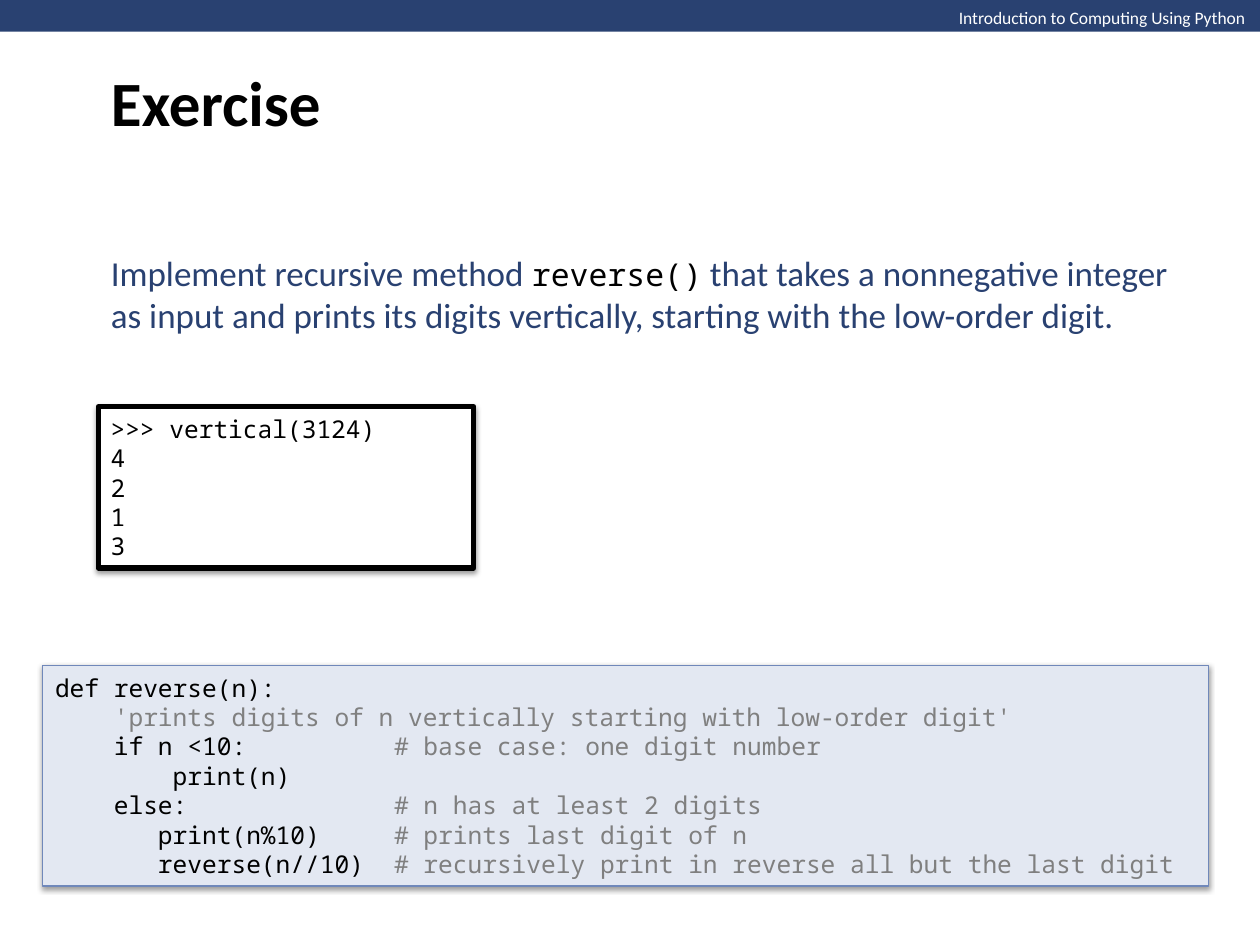
import dataclasses
import typing

import lxml.etree
import pptx
import pptx.dml.color
import pptx.enum.shapes
import pptx.enum.text
import pptx.oxml.ns
import pptx.shapes.autoshape
import pptx.slide
import pptx.text.text
import pptx.util

Cm = pptx.util.Cm
Pt = pptx.util.Pt

COLORS = {
    "navy": "294171",
    "white": "FFFFFF",
    "black": "000000",
    "pale": "E3E8F2",
    "edge": "7088BA",
    "docstring": "808080",
    "comment": "7F7F7F",
}
FORMATS = {
    "header": {"name": "Calibri", "size": Pt(10), "bold": False},
    "title": {"name": "Calibri", "size": Pt(36), "bold": True},
    "task": {"name": "Calibri", "size": Pt(20), "bold": False},
    "method": {"name": "Noto Sans Mono", "size": Pt(18), "bold": False},
    "code": {"name": "Noto Sans Mono", "size": Pt(14), "bold": False},
}
COMMENT_COLUMN = 23


class Span(typing.NamedTuple):
    text: str
    style: str
    color: str


Line = list[Span]


@dataclasses.dataclass
class Box:
    left: float
    top: float
    width: float
    height: float

    def lengths(self) -> list[pptx.util.Length]:
        return [Cm(side) for side in dataclasses.astuple(self)]


@dataclasses.dataclass
class CodePanel:
    box: Box
    fill: str
    edge: str
    edge_width: float
    lines: list[Line]


def rgb(color: str) -> pptx.dml.color.RGBColor:
    return pptx.dml.color.RGBColor.from_string(COLORS[color])


def code_line(code: str, comment: str = "") -> Line:
    if not comment:
        return [Span(code, "code", "black")]
    return [
        Span(code.ljust(COMMENT_COLUMN), "code", "black"),
        Span(comment, "code", "comment"),
    ]


def write(frame: pptx.text.text.TextFrame, lines: list[Line], wrap: bool = True) -> None:
    layout = {
        "word_wrap": wrap,
        "auto_size": pptx.enum.text.MSO_AUTO_SIZE.NONE,
        "vertical_anchor": pptx.enum.text.MSO_ANCHOR.MIDDLE,
    }
    for attribute, value in layout.items():
        setattr(frame, attribute, value)
    for index, line in enumerate(lines):
        paragraph = frame.paragraphs[0] if index == 0 else frame.add_paragraph()
        paragraph.alignment = pptx.enum.text.PP_ALIGN.LEFT
        paragraph.space_before = Pt(0)
        for span in line:
            run = paragraph.add_run()
            run.text = span.text
            for attribute, value in FORMATS[span.style].items():
                setattr(run.font, attribute, value)
            run.font.color.rgb = rgb(span.color)


def fill_placeholder(placeholder: typing.Any, box: Box, line: Line) -> None:
    for side, length in zip(("left", "top", "width", "height"), box.lengths()):
        setattr(placeholder, side, length)
    write(placeholder.text_frame, [line])


def remove_bullet(paragraph: typing.Any) -> None:
    properties = paragraph._p.get_or_add_pPr()
    properties.set("marL", "0")
    properties.set("indent", "0")
    lxml.etree.SubElement(properties, pptx.oxml.ns.qn("a:buNone"))


def add_rectangle(slide: pptx.slide.Slide, box: Box, fill: str) -> pptx.shapes.autoshape.Shape:
    rectangle = slide.shapes.add_shape(
        pptx.enum.shapes.MSO_SHAPE.RECTANGLE, *box.lengths()
    )
    rectangle.shadow.inherit = False
    rectangle.fill.solid()
    rectangle.fill.fore_color.rgb = rgb(fill)
    rectangle.line.fill.background()
    return rectangle


def cast_shadow(rectangle: pptx.shapes.autoshape.Shape) -> None:
    qn = pptx.oxml.ns.qn
    effects = rectangle._element.spPr.find(qn("a:effectLst"))
    shadow = lxml.etree.SubElement(
        effects, qn("a:outerShdw"),
        blurRad=str(Pt(3.1)), dist=str(Pt(1.6)), dir="5400000", rotWithShape="0",
    )
    tint = lxml.etree.SubElement(shadow, qn("a:srgbClr"), val=COLORS["black"])
    lxml.etree.SubElement(tint, qn("a:alpha"), val="38000")


def add_code_panel(slide: pptx.slide.Slide, panel: CodePanel) -> None:
    rectangle = add_rectangle(slide, panel.box, panel.fill)
    rectangle.line.color.rgb = rgb(panel.edge)
    rectangle.line.width = Pt(panel.edge_width)
    cast_shadow(rectangle)
    write(rectangle.text_frame, panel.lines)


SOLUTION = CodePanel(
    Box(0.86, 13.41, 23.5, 4.45), "pale", "edge", 0.75,
    [
        code_line("def reverse(n):"),
        [Span("    'prints digits of n vertically starting with low-order digit'",
              "code", "docstring")],
        code_line("    if n <10:", "# base case: one digit number"),
        code_line("        print(n)"),
        code_line("    else:", "# n has at least 2 digits"),
        code_line("       print(n%10)", "# prints last digit of n"),
        code_line("       reverse(n//10)",
                  "# recursively print in reverse all but the last digit"),
    ],
)
SESSION = CodePanel(
    Box(1.98, 8.2, 7.57, 3.25), "white", "black", 3,
    [code_line(text) for text in (">>> vertical(3124)", *"4213")],
)
TASK = [
    Span("Implement recursive method ", "task", "navy"),
    Span("reverse()", "method", "black"),
    Span(" that takes a nonnegative integer as input and prints its digits "
         "vertically, starting with the low-order digit.", "task", "navy"),
]


def main() -> None:
    deck = pptx.Presentation()
    deck.slide_width, deck.slide_height = Cm(25.4), Cm(19.05)
    slide = deck.slides.add_slide(deck.slide_layouts[1])

    add_rectangle(slide, Box(0, 0, 25.43, 0.64), "navy")
    course = slide.shapes.add_textbox(*Box(19.08, 0, 6.35, 0.69).lengths())
    write(course.text_frame,
          [[Span("Introduction to Computing Using Python", "header", "white")]],
          wrap=False)

    fill_placeholder(slide.shapes.title, Box(1.98, 0, 21.59, 4.09),
                     [Span("Exercise", "title", "black")])
    task = slide.placeholders[1]
    fill_placeholder(task, Box(1.98, 4.93, 22.38, 1.96), TASK)
    remove_bullet(task.text_frame.paragraphs[0])

    for panel in (SOLUTION, SESSION):
        add_code_panel(slide, panel)
    deck.save("out.pptx")


if __name__ == "__main__":
    main()
